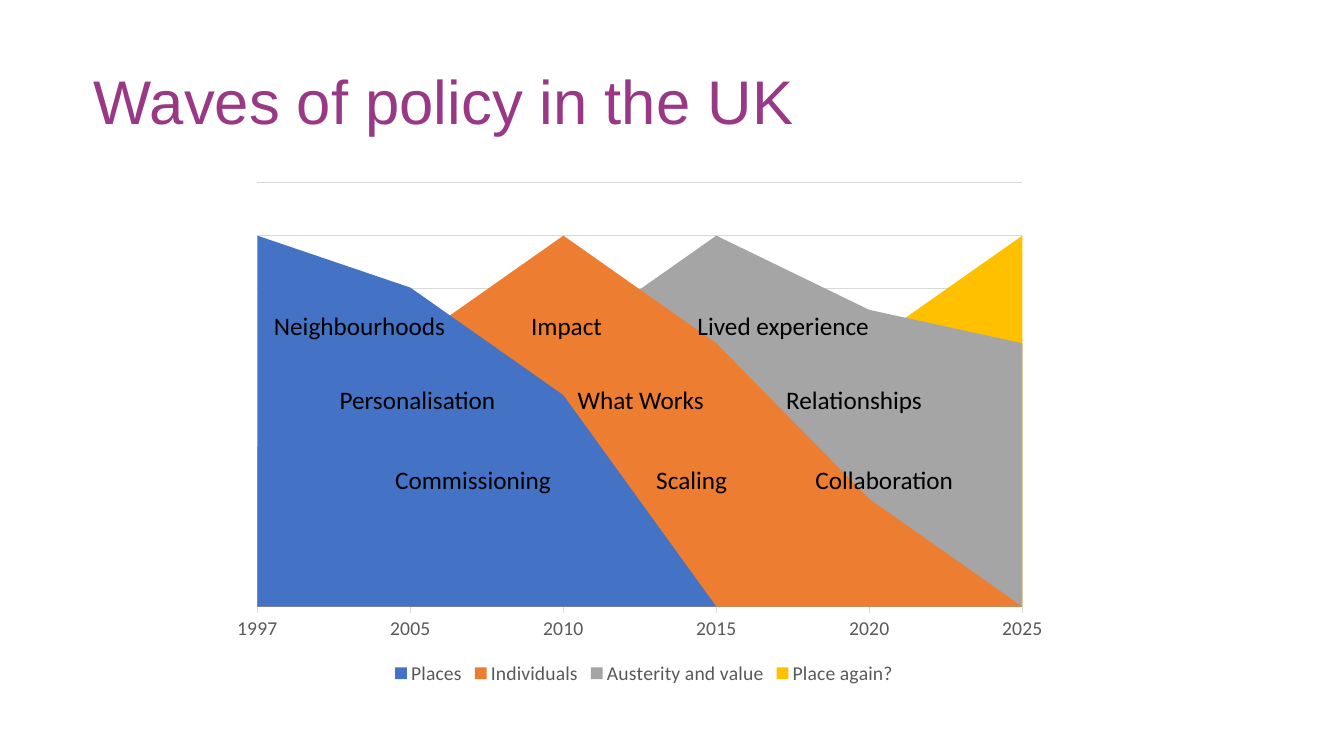
from dataclasses import dataclass

import pptx
import pptx.chart.data
import pptx.dml.color
import pptx.enum.chart
import pptx.enum.text
import pptx.oxml
import pptx.oxml.ns
import pptx.util

WIDTH = pptx.util.Inches(13.33)
HEIGHT = pptx.util.Inches(7.5)
PALE, GREY, BLACK, PURPLE = "D9D9D9", "595959", "000000", "993885"
PEAK = 100
STEP = PEAK / 7  # seven grid steps reach the peak, one more is headroom


@dataclass
class Box:
    """Place in percent of the slide's width and height."""
    left: float
    top: float
    width: float
    height: float

    def spot(self) -> tuple[int, int, int, int]:
        return (int(WIDTH * self.left / 100), int(HEIGHT * self.top / 100),
                int(WIDTH * self.width / 100), int(HEIGHT * self.height / 100))


@dataclass
class Wave:
    name: str
    color: str
    vals: tuple


@dataclass
class Label:
    text: str
    left: float
    row: int
    width: float


YEARS = ("1997", "2005", "2010", "2015", "2020", "2025")
WAVES = (
    Wave("Places", "4472C4", (100, 86, 57, 0, 0, None)),
    Wave("Individuals", "ED7D31", (43, 71, 100, 71, 29, None)),
    Wave("Austerity and value", "A5A5A5", (0, 0, 71, 100, 80, 71)),
    Wave("Place again?", "FFC000", (0, 0, 0, 0, 71, 100)),
)
ROWS = (40.4, 50.13, 60.8)
LABELS = (
    Label("Neighbourhoods", 19.65, 0, 18.3),
    Label("Impact", 38.78, 0, 10.65),
    Label("Lived experience", 51.16, 0, 18.3),
    Label("Personalisation", 24.53, 1, 16.2),
    Label("What Works", 42.24, 1, 13.43),
    Label("Relationships", 57.76, 1, 18.3),
    Label("Commissioning", 28.66, 2, 16.2),
    Label("Scaling", 48.09, 2, 13.43),
    Label("Collaboration", 59.94, 2, 18.3),
)


def tint(code: str) -> pptx.dml.color.RGBColor:
    return pptx.dml.color.RGBColor.from_string(code)


def style(font, size: float, color: str, face: str = "Calibri") -> None:
    font.size = pptx.util.Pt(size)
    font.name = face
    font.color.rgb = tint(color)


def rule(line) -> None:
    line.color.rgb = tint(PALE)
    line.width = pptx.util.Pt(0.75)


def write(slide, box: Box, text: str, size: float, color: str, face: str = "Calibri"):
    frame = slide.shapes.add_textbox(*box.spot()).text_frame
    frame.word_wrap = True
    para = frame.paragraphs[0]
    run = para.add_run()
    run.text = text
    style(run.font, size, color, face)
    return frame


def place(chart, x: float, y: float, w: float, h: float) -> None:
    """Fix the inner plot area, in shares of the chart."""
    plot = chart.plots[0]._element.getparent()
    for old in plot.findall(pptx.oxml.ns.qn("c:layout")):
        plot.remove(old)
    parts = "".join(f'<c:{tag} val="{val}"/>' for tag, val in (
        ("layoutTarget", "inner"), ("xMode", "edge"), ("yMode", "edge"),
        ("x", x), ("y", y), ("w", w), ("h", h)))
    plot.insert(0, pptx.oxml.parse_xml(
        f'<c:layout {pptx.oxml.ns.nsdecls("c")}>'
        f'<c:manualLayout>{parts}</c:manualLayout></c:layout>'))


def draw(slide, box: Box) -> None:
    data = pptx.chart.data.CategoryChartData()
    data.categories = YEARS
    for wave in WAVES:
        data.add_series(wave.name, wave.vals)
    kind = pptx.enum.chart.XL_CHART_TYPE.AREA
    chart = slide.shapes.add_chart(kind, *box.spot(), data).chart
    chart.has_title = False
    style(chart.font, 14, BLACK)
    chart.plots[0].vary_by_categories = False
    for wave, area in zip(WAVES, chart.plots[0].series):
        area.format.fill.solid()
        area.format.fill.fore_color.rgb = tint(wave.color)
        area.format.line.fill.background()

    # Axes
    years = chart.category_axis
    years.has_major_gridlines = False
    years.major_tick_mark = pptx.enum.chart.XL_TICK_MARK.OUTSIDE
    years.minor_tick_mark = pptx.enum.chart.XL_TICK_MARK.NONE
    style(years.tick_labels.font, 14, GREY)
    rule(years.format.line)
    scale = chart.value_axis
    scale.minimum_scale = 0
    scale.maximum_scale = PEAK + STEP
    scale.major_unit = STEP
    scale.has_major_gridlines = True
    rule(scale.major_gridlines.format.line)
    scale.visible = False
    for cross in scale._element.findall(pptx.oxml.ns.qn("c:crossBetween")):
        cross.set("val", "midCat")

    # Legend
    chart.has_legend = True
    chart.legend.position = pptx.enum.chart.XL_LEGEND_POSITION.BOTTOM
    chart.legend.include_in_layout = False
    style(chart.legend.font, 14, GREY)
    place(chart, 0.04, 0.02, 0.91, 0.82)


def main() -> None:
    deck = pptx.Presentation()
    deck.slide_width, deck.slide_height = WIDTH, HEIGHT
    slide = deck.slides.add_slide(deck.slide_layouts[6])

    # Title
    title = write(slide, Box(6.25, 8.8, 86.9, 10.4),
                  "Waves of policy in the UK", 44, PURPLE, "Arial")
    title.paragraphs[0].line_spacing = 0.9

    # Chart
    draw(slide, Box(16.65, 22.8, 62.55, 68.4))

    # Labels over the waves
    for label in LABELS:
        box = Box(label.left, ROWS[label.row], label.width, 5.4)
        frame = write(slide, box, label.text, 18, BLACK)
        frame.auto_size = pptx.enum.text.MSO_AUTO_SIZE.SHAPE_TO_FIT_TEXT

    deck.save("out.pptx")


if __name__ == "__main__":
    main()
